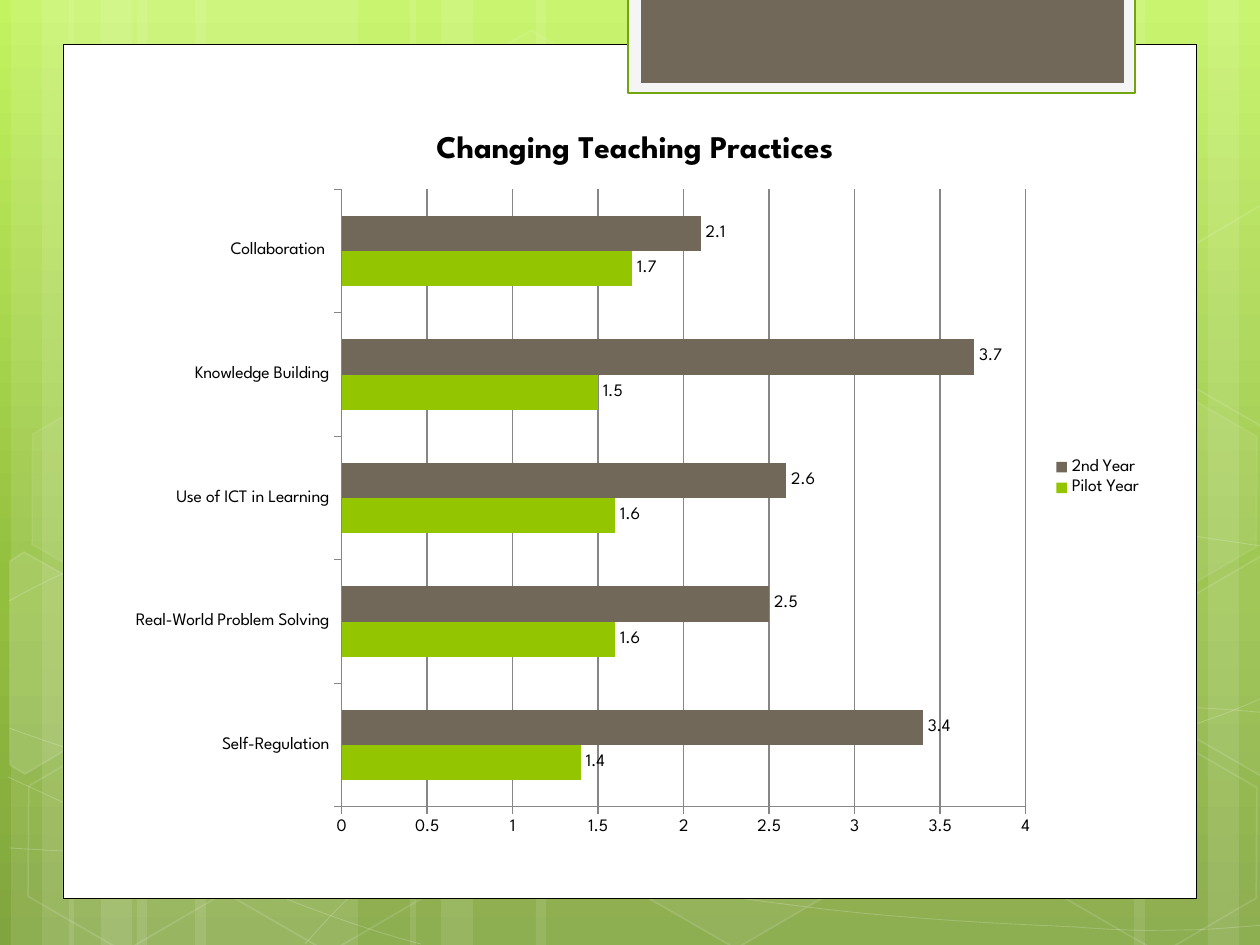
import pptx
import pptx.chart.data
import pptx.dml.color
import pptx.enum.chart
import pptx.enum.shapes
import pptx.oxml
import pptx.oxml.ns
import pptx.util
import copy

WIDTH, HEIGHT = 1260, 945
WHITE, BLACK, GREEN, BROWN, GREY = "FFFFFF", "000000", "94C600", "71685A", "868686"


def emu(px):
    return round(px * 914400 / 126)


def rgb(color):
    return pptx.dml.color.RGBColor.from_string(color)


class Deck:
    font = "League Spartan"

    def __init__(self):
        self.prs = pptx.Presentation()
        self.prs.slide_width, self.prs.slide_height = emu(WIDTH), emu(HEIGHT)
        self.slide = self.prs.slides.add_slide(self.prs.slide_layouts[6])

    def background(self, stops):
        fill = self.slide.background.fill
        fill.gradient()
        fill.gradient_angle = 270
        stop_list = next(self.slide.element.iter(pptx.oxml.ns.qn("a:gsLst")))
        while len(stop_list) < len(stops):
            stop_list.append(copy.deepcopy(stop_list[0]))
        for stop, (position, color) in zip(fill.gradient_stops, stops):
            stop.position = position
            stop.color.rgb = rgb(color)

    def set_alpha(self, shape, route, percent):
        color = shape.element.spPr.find(route, pptx.oxml.ns._nsmap)
        alpha = pptx.oxml.parse_xml(
            f'<a:alpha {pptx.oxml.ns.nsdecls("a")} val="{percent * 1000}"/>')
        color.append(alpha)

    def paint(self, shape, fill=None, line=None, weight=1, fill_alpha=100, line_alpha=100):
        shape.shadow.inherit = False
        if fill:
            shape.fill.solid()
            shape.fill.fore_color.rgb = rgb(fill)
            if fill_alpha < 100:
                self.set_alpha(shape, "a:solidFill/a:srgbClr", fill_alpha)
        else:
            shape.fill.background()
        if line:
            shape.line.color.rgb = rgb(line)
            shape.line.width = pptx.util.Pt(weight)
            if line_alpha < 100:
                self.set_alpha(shape, "a:ln/a:solidFill/a:srgbClr", line_alpha)
        else:
            shape.line.fill.background()

    def shape(self, kind, box, **style):
        shape = self.slide.shapes.add_shape(kind, *map(emu, box))
        self.paint(shape, **style)
        return shape

    def rect(self, *box, **style):
        return self.shape(pptx.enum.shapes.MSO_SHAPE.RECTANGLE, box, **style)

    def hexagon(self, x, y, **style):
        shape = self.shape(pptx.enum.shapes.MSO_SHAPE.HEXAGON, (x, y, 220, 192), **style)
        shape.adjustments[0] = 0.285
        shape.rotation = 30

    def outline(self, points, close, **style):
        points = [(emu(x), emu(y)) for x, y in points]
        builder = self.slide.shapes.build_freeform(*points[0], scale=1.0)
        builder.add_line_segments(points[1:], close=close)
        shape = builder.convert_to_shape()
        self.paint(shape, **style)
        return shape

    def wave(self, knots, **style):
        shape = self.outline(knots, False, **style)
        sides = list(shape.element.iter(pptx.oxml.ns.qn("a:lnTo")))
        for start in range(0, len(sides), 3):
            curve = pptx.oxml.parse_xml(f'<a:cubicBezTo {pptx.oxml.ns.nsdecls("a")}/>')
            sides[start].addprevious(curve)
            for side in sides[start:start + 3]:
                curve.append(side[0])
                side.getparent().remove(side)

    def format_font(self, font, size, bold=False):
        font.name, font.size, font.bold = self.font, pptx.util.Pt(size), bold
        font.color.rgb = rgb(BLACK)

    def bar_chart(self, box, title, categories, series):
        data = pptx.chart.data.CategoryChartData()
        data.categories = categories
        for name, values, _ in series:
            data.add_series(name, values)
        chart = self.slide.shapes.add_chart(
            pptx.enum.chart.XL_CHART_TYPE.BAR_CLUSTERED, *map(emu, box), data).chart
        self.format_font(chart.font, 10)
        chart.has_title = True
        chart.chart_title.include_in_layout = False
        heading = chart.chart_title.text_frame
        heading.text = title
        self.format_font(heading.paragraphs[0].runs[0].font, 18, bold=True)
        chart.has_legend = True
        chart.legend.position = pptx.enum.chart.XL_LEGEND_POSITION.RIGHT
        chart.legend.include_in_layout = False

        scores = chart.value_axis
        scores.minimum_scale, scores.maximum_scale, scores.major_unit = 0, 4, 0.5
        scores.has_major_gridlines = True
        for axis in (chart.category_axis, scores):
            axis.major_tick_mark = pptx.enum.chart.XL_TICK_MARK.OUTSIDE
            axis.minor_tick_mark = pptx.enum.chart.XL_TICK_MARK.NONE
        for part in (chart.category_axis, scores, scores.major_gridlines):
            part.format.line.color.rgb = rgb(GREY)
            part.format.line.width = pptx.util.Pt(0.75)

        plot = chart.plots[0]
        plot.gap_width, plot.overlap, plot.vary_by_categories = 150, 0, False
        for bars, (_, _, color) in zip(plot.series, series):
            bars.format.fill.solid()
            bars.format.fill.fore_color.rgb = rgb(color)
            labels = bars.data_labels
            labels.show_value = True
            labels.position = pptx.enum.chart.XL_LABEL_POSITION.OUTSIDE_END
            self.format_font(labels.font, 10)


BANDS = [(137, 221), (11, 63), (42, 105), (195, 221), (69, 63), (101, 105),
         (924, 221), (1208, 63), (1134, 105), (536, 388), (410, 63), (441, 105)]
WAVES = [
    [(9, 848), (77, 852), (145, 856), (239, 854), (334, 853), (451, 850), (577, 838),
     (703, 825), (882, 801), (998, 777), (1113, 753), (1231, 716), (1269, 694)],
    [(9, 601), (45, 581), (82, 562), (152, 543), (227, 521), (326, 496), (437, 488),
     (549, 479), (685, 478), (824, 488), (963, 498), (1193, 537), (1269, 547)],
    [(8, 777), (160, 847), (311, 916), (421, 944)],
    [(9, 728), (48, 742), (88, 756), (161, 776), (234, 795), (344, 827), (450, 848),
     (554, 869), (687, 892), (791, 905), (896, 919), (1008, 924), (1075, 927),
     (1140, 932), (1158, 930), (1191, 930), (1223, 929), (1246, 926), (1269, 925)],
    [(305, 944), (328, 919), (350, 893), (381, 871), (411, 848), (454, 823), (489, 805),
     (524, 788), (546, 779), (592, 767), (638, 755), (722, 737), (766, 728),
     (811, 719), (818, 719), (857, 717), (896, 713), (958, 709), (1000, 708),
     (1045, 707), (1116, 708), (1116, 708), (1144, 708), (1173, 708), (1201, 708),
     (1223, 709), (1245, 711), (1256, 712), (1268, 713), (1264, 712), (1268, 713)],
]
HEXAGONS = [(421, 45, 4, 8), (626, 742, 6, 12), (14, 745, 0, 12), (18, 393, 7, 8),
            (219, 746, 0, 12), (949, 571, 10, 12), (1051, 747, 0, 12), (1051, 396, 7, 8)]
CUT_HEXAGONS = [
    (10, [(10, 561), (24, 552), (121, 607), (120, 718), (25, 774), (10, 765)]),
    (4, [(1167, 611), (1261, 556), (1271, 562), (1271, 772), (1263, 777), (1167, 722)]),
    (0, [(1167, 261), (1261, 205), (1273, 212), (1271, 422), (1263, 427), (1167, 372)]),
]


def main():
    deck = Deck()
    deck.background([(0, "C3F35F"), (0.62, "93BF3F"), (1, "81A53E")])
    for left, width in BANDS:
        deck.rect(left, 0, width, HEIGHT, fill=WHITE, fill_alpha=10)
    for knots in WAVES:
        deck.wave(knots, line=WHITE, weight=0.5, line_alpha=20)
    for x, y, tint, edge in HEXAGONS:
        deck.hexagon(x, y, fill=WHITE if tint else None, fill_alpha=tint,
                     line=WHITE, line_alpha=edge)
    for tint, corners in CUT_HEXAGONS:
        deck.outline(corners, True, fill=WHITE if tint else None, fill_alpha=tint,
                     line=WHITE, line_alpha=12)

    deck.rect(63, 45, 1134, 854, fill=WHITE, line=BLACK, weight=0.5)
    deck.rect(628, -2, 507, 95, fill="F5F5F5", line="74A510", weight=1.25)
    deck.rect(641, -2, 483, 85, fill=BROWN)
    deck.bar_chart(
        (115, 105, 1040, 745), "Changing Teaching Practices",
        ["Self-Regulation", "Real-World Problem Solving", "Use of ICT in Learning",
         "Knowledge Building", "Collaboration "],
        [("Pilot Year", [1.4, 1.6, 1.6, 1.5, 1.7], GREEN),
         ("2nd Year", [3.4, 2.5, 2.6, 3.7, 2.1], BROWN)])
    deck.prs.save("out.pptx")


if __name__ == "__main__":
    main()
